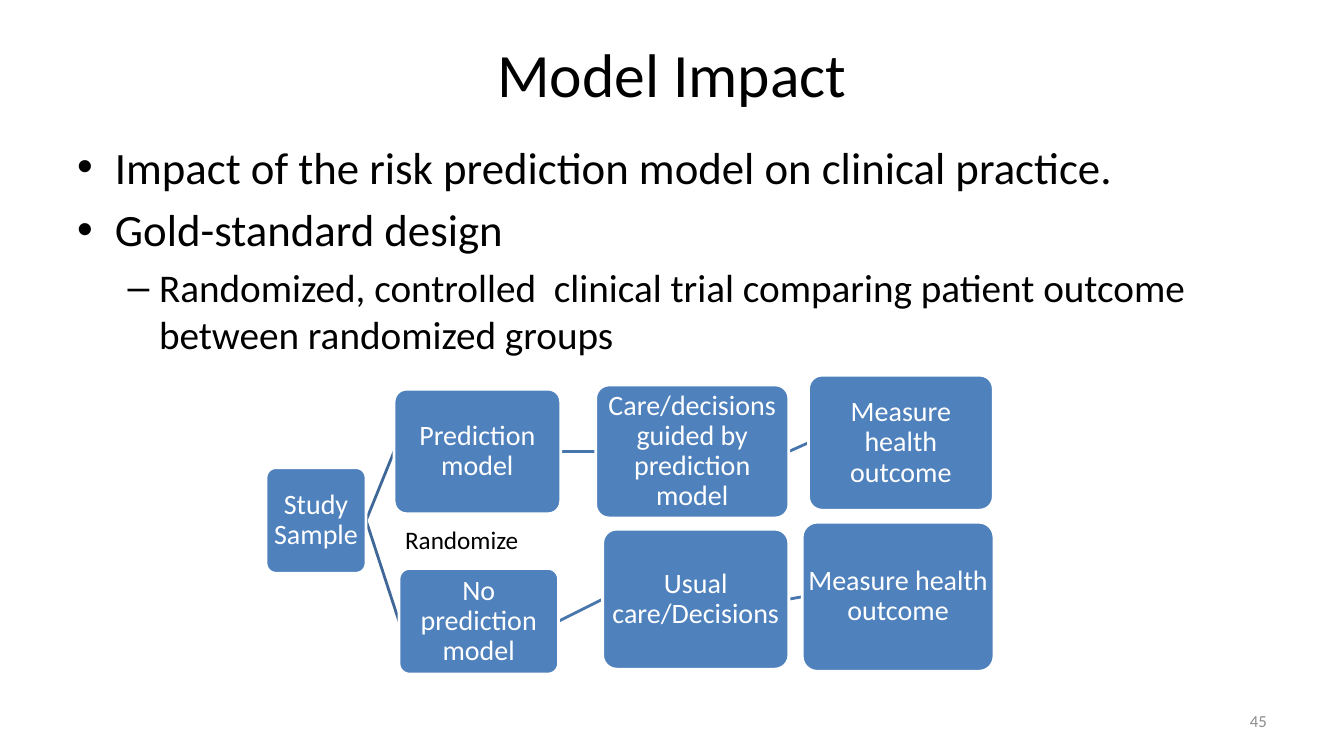
from lxml import etree
from pptx import Presentation
from pptx.dml.color import RGBColor
from pptx.enum import shapes, text
from pptx.oxml.ns import qn
from pptx.util import Pt

HEX = {"ink": "000000", "page": "FFFFFF", "box": "4F81BD",
       "fork": "3F6797", "link": "4875AC", "number": "8C8C8C"}
FONT = "Calibri"

TITLE = "Model Impact"
# text, size, bullet, left margin, hanging indent, space before
POINTS = [
    ("Impact of the risk prediction model on clinical practice.", 32, "•", 27, 27, 0),
    ("Gold-standard design", 32, "•", 27, 27, 6.4),
    ("Randomized, controlled  clinical trial comparing patient outcome "
     "between randomized groups", 28, "–", 58.5, 22.5, 5.6),
]
# name: (label, left, top, width, height)
STEPS = {
    "sample": ("Study Sample", 190, 334, 71.5, 75.5),
    "model": ("Prediction model", 281.5, 278, 119, 89),
    "guided": ("Care/decisions guided by prediction model", 425.5, 275, 138, 95),
    "result": ("Measure health outcome", 577.5, 268, 132, 96.5),
    "none": ("No prediction model", 285, 406, 114, 75.5),
    "usual": ("Usual care/Decisions", 430.5, 378, 133, 100),
    "control": ("Measure health outcome", 573, 373, 137, 106.5),
}
ARMS = [("sample", "model", "guided", "result"),
        ("sample", "none", "usual", "control")]


def color(name):
    return RGBColor.from_string(HEX[name])


def write(para, words, size, ink="ink", align=text.PP_ALIGN.LEFT):
    para.alignment = align
    run = para.add_run()
    run.text = words
    run.font.name, run.font.size = FONT, Pt(size)
    run.font.color.rgb = color(ink)


def add_box(slide, left, top, width, height, anchor=text.MSO_ANCHOR.TOP):
    box = slide.shapes.add_textbox(Pt(left), Pt(top), Pt(width), Pt(height))
    frame = box.text_frame
    frame.word_wrap = True
    frame.vertical_anchor = anchor
    return frame


def add_points(slide):
    frame = add_box(slide, 48, 96, 887, 380)
    for i, (words, size, mark, margin, hang, gap) in enumerate(POINTS):
        para = frame.add_paragraph() if i else frame.paragraphs[0]
        para.space_before = Pt(gap)
        props = para._p.get_or_add_pPr()
        props.set("marL", str(Pt(margin)))
        props.set("indent", str(-Pt(hang)))
        etree.SubElement(props, qn("a:buFont")).set("typeface", "Arial")
        etree.SubElement(props, qn("a:buChar")).set("char", mark)
        write(para, words, size)


def add_link(slide, start, end):
    """Join the right middle of one step to the left middle of the next."""
    _, x, y, w, h = STEPS[start]
    _, x2, y2, _, h2 = STEPS[end]
    line = slide.shapes.add_connector(
        shapes.MSO_CONNECTOR.STRAIGHT,
        Pt(x + w), Pt(y + h / 2), Pt(x2), Pt(y2 + h2 / 2))
    line.line.width = Pt(2)
    line.line.color.rgb = color("fork" if start == "sample" else "link")
    etree.SubElement(line._element.spPr, qn("a:effectLst"))


def add_step(slide, label, *place):
    box = slide.shapes.add_shape(
        shapes.MSO_SHAPE.ROUNDED_RECTANGLE, *map(Pt, place))
    box.adjustments[0] = 0.1
    box.shadow.inherit = False
    box.fill.solid()
    box.fill.fore_color.rgb = color("box")
    box.line.color.rgb = color("page")
    box.line.width = Pt(2)
    frame = box.text_frame
    frame.word_wrap = True
    frame.vertical_anchor = text.MSO_ANCHOR.MIDDLE
    frame.margin_left = frame.margin_right = Pt(0.75)
    frame.margin_top = frame.margin_bottom = Pt(0.75)
    para = frame.paragraphs[0]
    para.line_spacing = 0.9
    write(para, label, 20, "page", text.PP_ALIGN.CENTER)


def main():
    deck = Presentation()
    deck.slide_width, deck.slide_height = Pt(960), Pt(540)
    slide = deck.slides.add_slide(deck.slide_layouts[6])

    mid = text.MSO_ANCHOR.MIDDLE
    title = add_box(slide, 48, 21.5, 864, 61, mid)
    write(title.paragraphs[0], TITLE, 44, align=text.PP_ALIGN.CENTER)
    add_points(slide)
    number = add_box(slide, 688, 500.5, 224, 28.75, mid)
    write(number.paragraphs[0], "45", 12, "number", text.PP_ALIGN.RIGHT)

    for arm in ARMS:
        for start, end in zip(arm, arm[1:]):
            add_link(slide, start, end)
    for step in STEPS.values():
        add_step(slide, *step)
    note = add_box(slide, 282.25, 371, 96.5, 29)
    note.word_wrap = False
    write(note.paragraphs[0], "Randomize", 18)

    deck.save("out.pptx")


if __name__ == "__main__":
    main()
